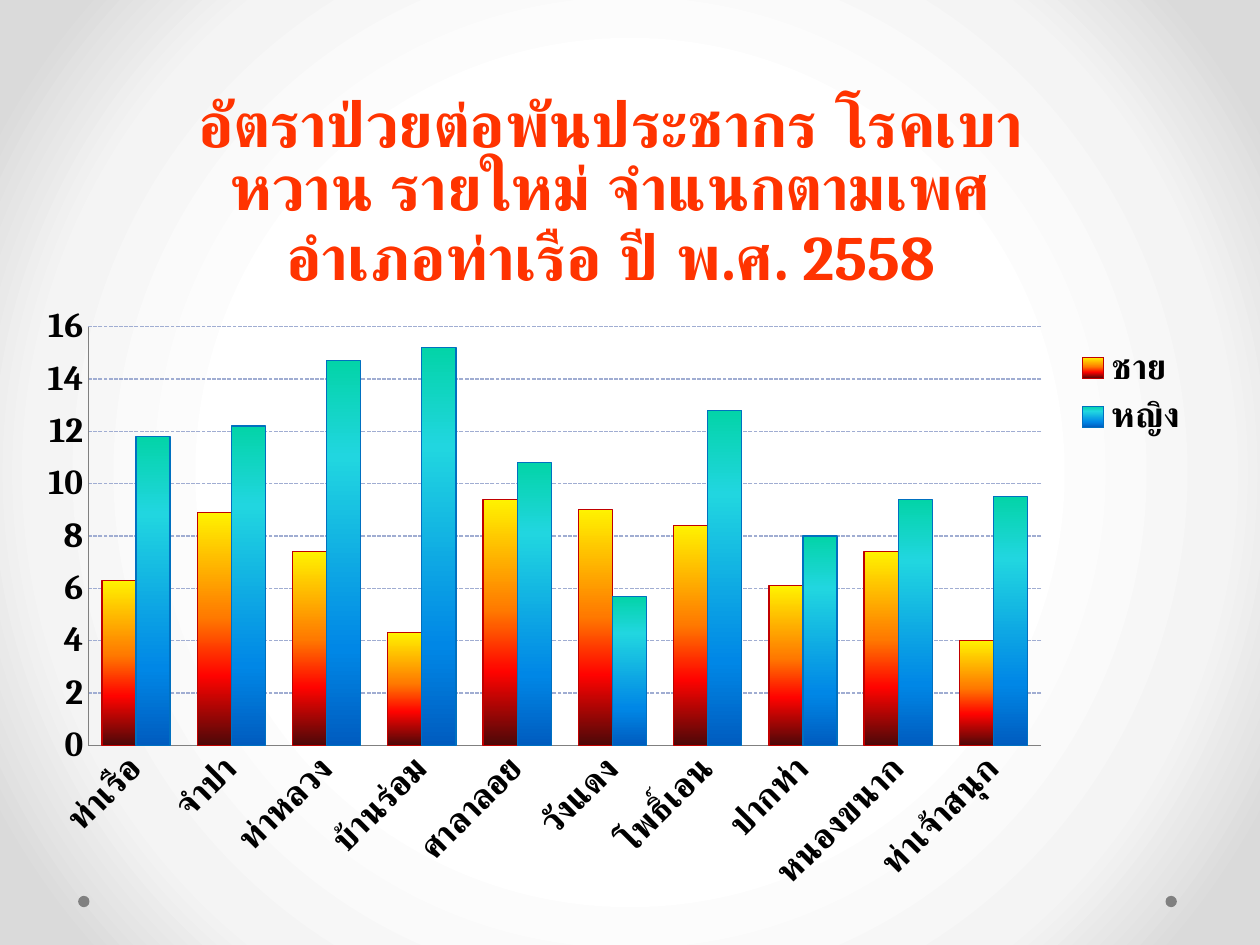
from pptx import Presentation
from pptx.chart.data import CategoryChartData
from pptx.dml.color import RGBColor
from pptx.enum.chart import XL_CHART_TYPE, XL_LEGEND_POSITION, XL_TICK_MARK
from pptx.enum.dml import MSO_LINE
from pptx.enum.shapes import MSO_SHAPE
from pptx.oxml import parse_xml
from pptx.oxml.ns import nsdecls, qn
from pptx.util import Inches, Pt

FONT = "Cambria"
BLACK = RGBColor(0x00, 0x00, 0x00)
GRAY = RGBColor(0x80, 0x80, 0x80)
TITLE_COLOR = RGBColor(0xFF, 0x33, 0x00)
GRID_COLOR = RGBColor(0xA0, 0xAD, 0xD2)
MALE_LINE = RGBColor(0xC0, 0x00, 0x00)
FEMALE_LINE = RGBColor(0x00, 0x70, 0xC0)

BACKGROUND_STOPS = [(50, RGBColor(0xFF, 0xFF, 0xFF)), (76, RGBColor(0xF4, 0xF4, 0xF4)),
                    (92, RGBColor(0xDA, 0xDA, 0xDA))]
MALE_STOPS = [(0, RGBColor(0xFF, 0xF2, 0x00)), (45, RGBColor(0xFF, 0x7A, 0x00)),
              (70, RGBColor(0xFF, 0x03, 0x00)), (100, RGBColor(0x4D, 0x08, 0x08))]
FEMALE_STOPS = [(0, RGBColor(0x03, 0xD4, 0xA8)), (25, RGBColor(0x21, 0xD6, 0xE0)),
                (75, RGBColor(0x00, 0x87, 0xE6)), (100, RGBColor(0x00, 0x5C, 0xBF))]
DOWNWARD = '<a:lin ang="5400000" scaled="0"/>'
FROM_CENTER = ('<a:path path="circle"><a:fillToRect l="50000" t="50000" '
               'r="50000" b="50000"/></a:path>')

TITLE = "อัตราป่วยต่อพันประชากร โรคเบาหวาน รายใหม่ จำแนกตามเพศ อำเภอท่าเรือ ปี พ.ศ. 2558"
SUBDISTRICTS = ["ท่าเรือ", "จำปา", "ท่าหลวง", "บ้านร่อม", "ศาลาลอย",
                "วังแดง", "โพธิ์เอน", "ปากท่า", "หนองขนาก", "ท่าเจ้าสนุก"]
SERIES = [
    ("ชาย", [6.3, 8.9, 7.4, 4.3, 9.4, 9, 8.4, 6.1, 7.4, 4], MALE_STOPS, MALE_LINE),
    ("หญิง", [11.8, 12.2, 14.7, 15.2, 10.8, 5.7, 12.8, 8, 9.4, 9.5],
     FEMALE_STOPS, FEMALE_LINE),
]


def set_gradient(fill, owner, stops, direction):
    """Fill with stops given in percent; owner is the element that holds the fill."""
    fill.gradient()
    stop_list = "".join(
        f'<a:gs pos="{position * 1000}"><a:srgbClr val="{color}"/></a:gs>'
        for position, color in stops)
    default = owner.xpath(".//a:gradFill")[0]
    default.getparent().replace(default, parse_xml(
        f'<a:gradFill {nsdecls("a")} rotWithShape="1">'
        f'<a:gsLst>{stop_list}</a:gsLst>{direction}</a:gradFill>'))


def style_font(font, size, color):
    font.name = FONT
    font.size = Pt(size)
    font.bold = True
    font.color.rgb = color


def place(element, index, left, top, width, height, inner=False):
    """Give a chart part a fixed place, in shares of the chart's size."""
    for layout in element.findall(qn("c:layout")):
        element.remove(layout)
    target = '<c:layoutTarget val="inner"/>' if inner else ""
    element.insert(index, parse_xml(
        f'<c:layout {nsdecls("c")}><c:manualLayout>{target}'
        '<c:xMode val="edge"/><c:yMode val="edge"/>'
        f'<c:x val="{left}"/><c:y val="{top}"/><c:w val="{width}"/><c:h val="{height}"/>'
        '</c:manualLayout></c:layout>'))


def add_dot(slide, left, top):
    dot = slide.shapes.add_shape(MSO_SHAPE.OVAL, left, top, Inches(0.09), Inches(0.09))
    dot.shadow.inherit = False
    dot.fill.solid()
    dot.fill.fore_color.rgb = GRAY
    dot.line.fill.background()


def style_title(chart):
    paragraph = chart.chart_title.text_frame.paragraphs[0]
    run = paragraph.add_run()
    run.text = TITLE
    style_font(run.font, 36, TITLE_COLOR)
    chart.chart_title.include_in_layout = False


def style_axes(chart):
    for axis in (chart.category_axis, chart.value_axis):
        axis.major_tick_mark = XL_TICK_MARK.NONE
        axis.minor_tick_mark = XL_TICK_MARK.NONE
        axis.format.line.color.rgb = GRAY
        style_font(axis.tick_labels.font, 20, BLACK)
    chart.category_axis._element.txPr.bodyPr.set("rot", "-2700000")

    values = chart.value_axis
    values.minimum_scale, values.maximum_scale, values.major_unit = 0, 16, 2
    values.tick_labels.number_format = "0"
    values.tick_labels.number_format_is_linked = False
    grid_line = values.major_gridlines.format.line
    grid_line.color.rgb = GRID_COLOR
    grid_line.width = Pt(0.75)
    grid_line.dash_style = MSO_LINE.SQUARE_DOT
    grid_line._ln.find(qn("a:prstDash")).set("val", "sysDash")


def style_legend(chart):
    chart.has_legend = True
    legend = chart.legend
    legend.position = XL_LEGEND_POSITION.RIGHT
    legend.include_in_layout = False
    style_font(legend.font, 20, BLACK)
    place(legend._element, 1, 0.89, 0.33, 0.11, 0.13)


def add_rate_chart(slide, left, top, width, height):
    data = CategoryChartData(number_format="0.0")
    data.categories = SUBDISTRICTS
    for name, rates, _, _ in SERIES:
        data.add_series(name, rates)
    chart = slide.shapes.add_chart(
        XL_CHART_TYPE.COLUMN_CLUSTERED, left, top, width, height, data).chart
    style_font(chart.font, 20, BLACK)

    plot = chart.plots[0]
    plot.vary_by_categories = False
    plot.gap_width = 80
    plot.overlap = 0
    for series, (_, _, stops, line_color) in zip(plot.series, SERIES):
        set_gradient(series.format.fill, series._element, stops, DOWNWARD)
        series.format.line.color.rgb = line_color
        series.format.line.width = Pt(0.75)

    style_title(chart)
    style_axes(chart)
    style_legend(chart)
    place(chart._chartSpace.chart.plotArea, 0, 0.054, 0.318, 0.814, 0.491, inner=True)


def main():
    presentation = Presentation()
    presentation.slide_width = Inches(10)
    presentation.slide_height = Inches(7.5)
    slide = presentation.slides.add_slide(presentation.slide_layouts[6])
    set_gradient(slide.background.fill, slide.element, BACKGROUND_STOPS, FROM_CENTER)
    for left in (9.25, 0.62):
        add_dot(slide, Inches(left), Inches(7.11))
    add_rate_chart(slide, Inches(0.2), Inches(0.44), Inches(9.29), Inches(6.77))
    presentation.save("out.pptx")


if __name__ == "__main__":
    main()
